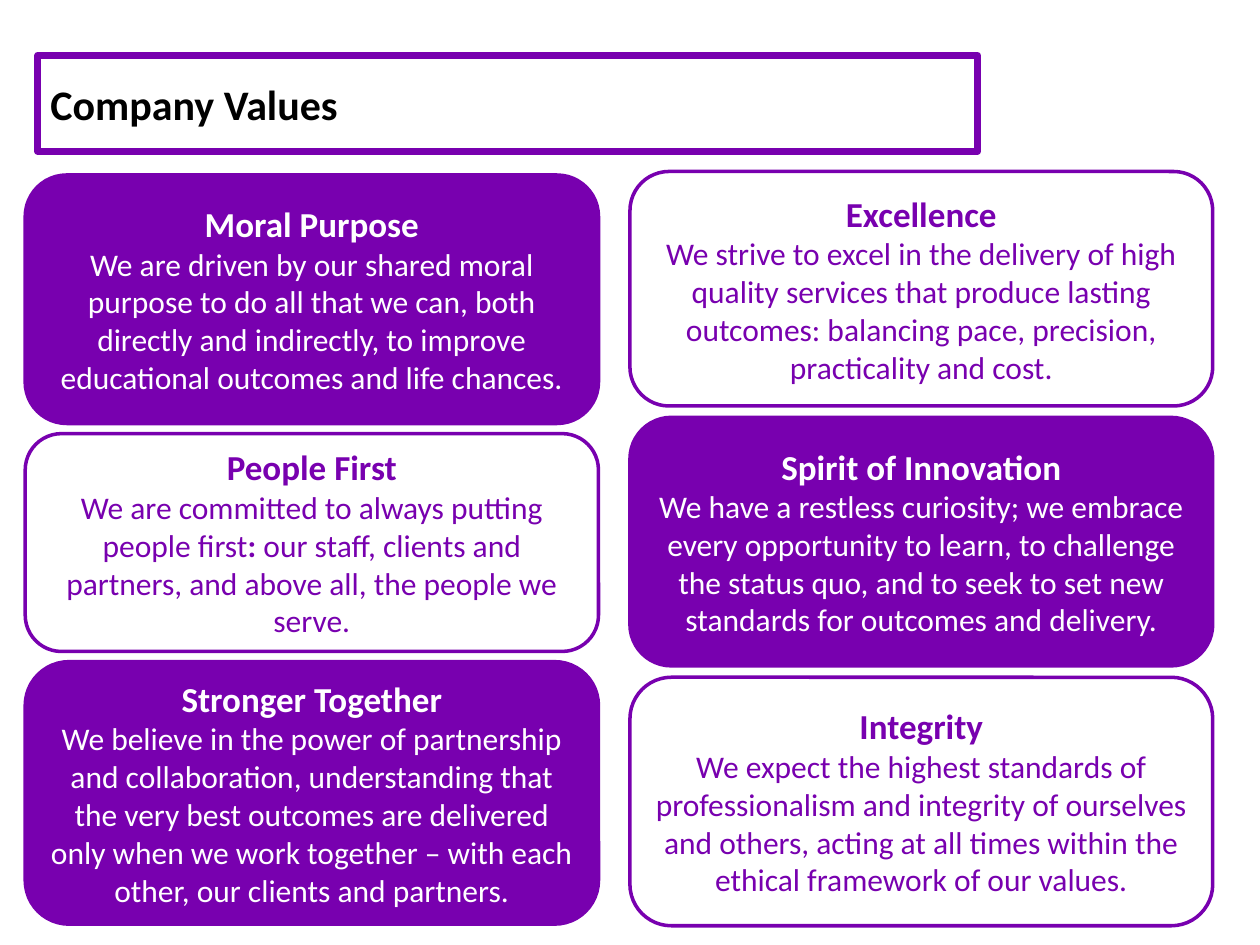
import pptx
import pptx.util
import pptx.dml.color
import pptx.enum.shapes
import pptx.enum.text
import pptx.oxml.ns
from lxml import etree

Pt = pptx.util.Pt
ALIGN = pptx.enum.text.PP_ALIGN
COLORS = {"purple": "7800AF", "white": "FFFFFF", "black": "000000"}

LEFT = [
    (142, True, "Moral Purpose", [
        ("We are driven by our shared moral purpose to do all that we can, both directly "
         "and indirectly, to improve educational outcomes and life chances.", False)]),
    (124.5, False, "People First", [
        ("We are committed to always putting people first", False),
        (":", True),
        (" our staff, clients and partners, and above all, the people we serve.", False)]),
    (150, True, "Stronger Together", [
        ("We believe in the power of partnership and collaboration, understanding that the "
         "very best outcomes are delivered only when we work together – with each other, "
         "our clients and partners.", False)]),
]
RIGHT = [
    (134, False, "Excellence", [
        ("We strive to excel in the delivery of high quality services that produce lasting "
         "outcomes: balancing pace, precision, practicality and cost.", False)]),
    (142, True, "Spirit of Innovation", [
        ("We have a restless curiosity; we embrace every opportunity to learn, to challenge "
         "the status quo, and to seek to set new standards for outcomes and delivery.", False)]),
    (142, False, "Integrity", [
        ("We expect the highest standards of professionalism and integrity of ourselves and "
         "others, acting at all times within the ethical framework of our values.", False)]),
]


def rgb(name):
    """Return the named colour."""
    return pptx.dml.color.RGBColor.from_string(COLORS[name])


def write(para, text, size=18, color="black", bold=False, align=ALIGN.CENTER):
    """Add a formatted run to a paragraph."""
    para.alignment = align
    run = para.add_run()
    run.text = text
    font = run.font
    font.name, font.size, font.bold = "Calibri", Pt(size), bold
    font.color.rgb = rgb(color)


def frame(shape, fill, width):
    """Give a shape its fill, purple outline and text settings."""
    shape.fill.solid()
    shape.fill.fore_color.rgb = rgb(fill)
    shape.line.color.rgb = rgb("purple")
    shape.line.width = Pt(width)
    text = shape.text_frame
    text.word_wrap = True
    text.auto_size = pptx.enum.text.MSO_AUTO_SIZE.NONE
    text.vertical_anchor = pptx.enum.text.MSO_ANCHOR.MIDDLE
    return text


def head(slide, left, top, width, height):
    """Place the slide title in a rounded frame."""
    title = slide.shapes.title
    title.left, title.top = Pt(left), Pt(top)
    title.width, title.height = Pt(width), Pt(height)
    etree.SubElement(title.element.spPr, pptx.oxml.ns.qn("a:prstGeom"), prst="roundRect")
    text = frame(title, "white", 4)
    write(text.paragraphs[0], "Company Values", size=24, bold=True, align=ALIGN.LEFT)


def card(slide, left, top, width, height, solid, name, parts):
    """Place one value card with its name and description."""
    shape = slide.shapes.add_shape(
        pptx.enum.shapes.MSO_SHAPE.ROUNDED_RECTANGLE,
        Pt(left), Pt(top), Pt(width), Pt(height))
    shape.shadow.inherit = False
    fill, ink = ("purple", "white") if solid else ("white", "purple")
    text = frame(shape, fill, 2)
    write(text.paragraphs[0], name, size=20, color=ink, bold=True)
    body = text.add_paragraph()
    for words, bold in parts:
        write(body, words, color=ink, bold=bold)


def column(slide, left, top, width, gap, cards):
    """Stack value cards downwards with an equal gap."""
    for height, *rest in cards:
        card(slide, left, top, width, height, *rest)
        top += height + gap


def main():
    """Build and save the slide."""
    deck = pptx.Presentation()
    deck.slide_width, deck.slide_height = Pt(720), Pt(540)
    slide = deck.slides.add_slide(deck.slide_layouts[5])
    head(slide, 21.6, 31.7, 537, 54.7)
    column(slide, 14.4, 100, 327.6, 5.8, LEFT)
    column(slide, 360, 98, 333, 6.5, RIGHT)
    deck.save("out.pptx")


if __name__ == "__main__":
    main()
